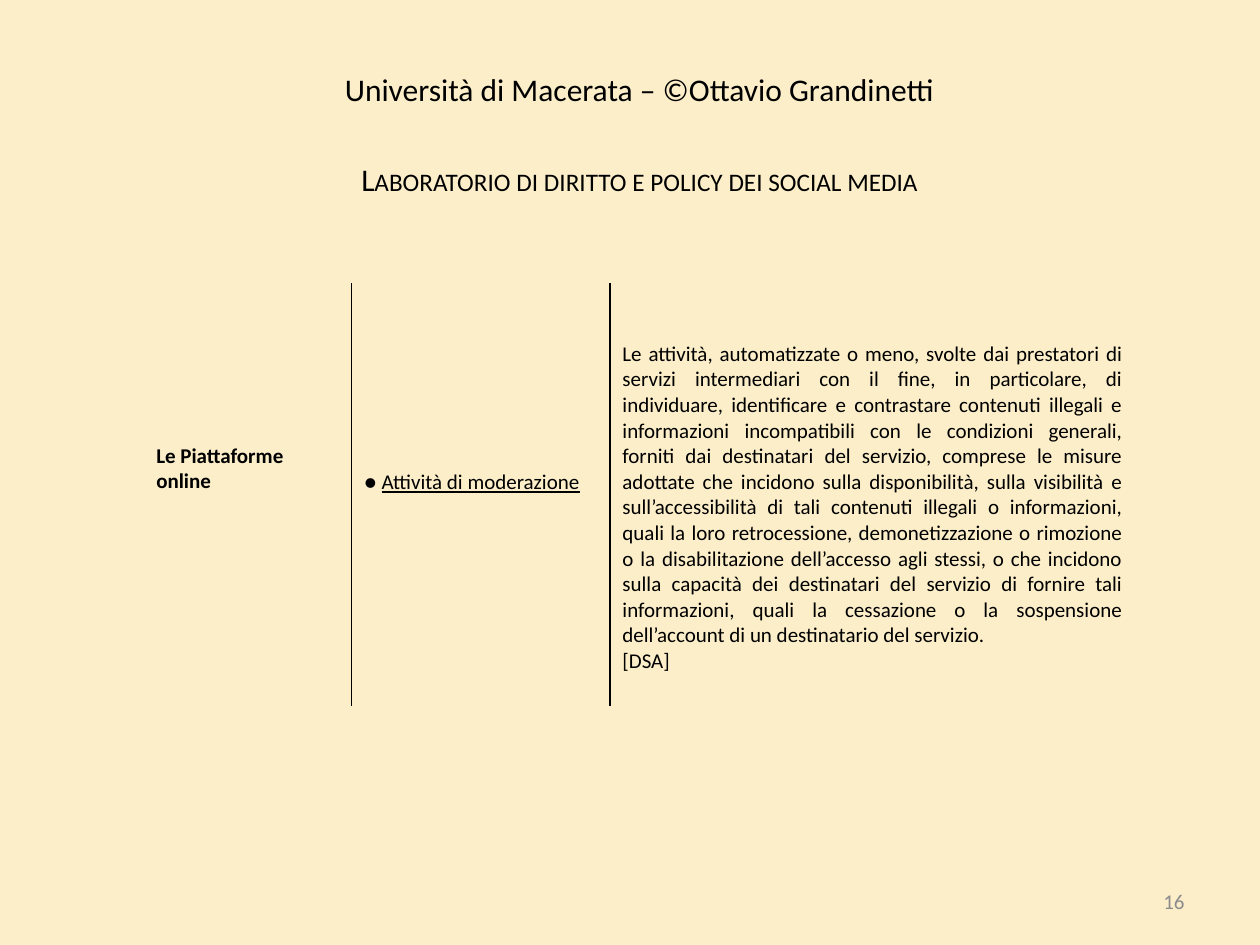
from dataclasses import dataclass, field

from lxml.etree import SubElement
from pptx import Presentation
from pptx.dml.color import RGBColor
from pptx.enum.text import MSO_ANCHOR as Anchor, PP_ALIGN as Align
from pptx.oxml import parse_xml
from pptx.oxml.ns import nsdecls, qn
from pptx.table import Table, _Cell as Cell
from pptx.text.text import TextFrame
from pptx.util import Inches, Length, Pt


@dataclass(frozen=True)
class Theme:
    font: str = "Calibri"
    background: str = "FBEEC9"
    ink: str = "000000"
    muted: str = "8C8C8C"
    heading_size: int = 18
    body_size: int = 12
    rule_width: int = 1


@dataclass(frozen=True)
class Span:
    text: str
    format: dict = field(default_factory=dict)
    small_caps: bool = False


@dataclass(frozen=True)
class Entry:
    """Text of one table cell; drop is the top margin as a share of the height."""
    row: int
    column: int
    paragraphs: list
    size: int
    align: Align = Align.LEFT
    drop: float = 0.67
    rows: int = 1
    columns: int = 1


THEME = Theme()
WIDTH, HEIGHT = Inches(10), Inches(7.5)
NO_STYLE = "{2D5ABB26-0587-4C30-8999-92F81FD0307C}"

# Table grid, in percent of the slide's size
TABLE_LEFT, TABLE_TOP = 11.4, 6.93
COLUMN_SHARES = (16.5, 20.5, 41.7)
ROW_SHARES = (5.47, 17.6, 5.47, 39.2)

DEFINITION = (
    "Le attività, automatizzate o meno, svolte dai prestatori di servizi intermediari "
    "con il fine, in particolare, di individuare, identificare e contrastare contenuti "
    "illegali e informazioni incompatibili con le condizioni generali, forniti dai "
    "destinatari del servizio, comprese le misure adottate che incidono sulla "
    "disponibilità, sulla visibilità e sull’accessibilità di tali contenuti illegali o "
    "informazioni, quali la loro retrocessione, demonetizzazione o rimozione o la "
    "disabilitazione dell’accesso agli stessi, o che incidono sulla capacità dei "
    "destinatari del servizio di fornire tali informazioni, quali la cessazione o la "
    "sospensione dell’account di un destinatario del servizio."
)

ENTRIES = [
    Entry(0, 0, [[Span("Università di Macerata – ©Ottavio Grandinetti")]],
          THEME.heading_size, Align.CENTER, columns=3),
    Entry(1, 0, [[Span("Laboratorio di diritto e policy dei social media", small_caps=True)]],
          THEME.heading_size, Align.CENTER, drop=4.7, columns=3),
    Entry(2, 0, [[Span("Le Piattaforme online", {"bold": True})]],
          THEME.body_size, drop=16.93, rows=2),
    Entry(3, 1, [[Span("● "), Span("Attività di moderazione", {"underline": True})]],
          THEME.body_size, drop=14.2),
    Entry(3, 2, [[Span(DEFINITION)], [Span("[DSA]")]], THEME.body_size, Align.JUSTIFY),
]


def across(share: float) -> Length:
    return Length(round(WIDTH * share / 100))


def down(share: float) -> Length:
    return Length(round(HEIGHT * share / 100))


def write(frame: TextFrame, paragraphs: list, size: int, align: Align, color: str) -> None:
    for index, spans in enumerate(paragraphs):
        paragraph = frame.paragraphs[0] if index == 0 else frame.add_paragraph()
        paragraph.alignment = align
        for span in spans:
            run = paragraph.add_run()
            run.text = span.text
            for name, value in {"name": THEME.font, "size": Pt(size), **span.format}.items():
                setattr(run.font, name, value)
            run.font.color.rgb = RGBColor.from_string(color)
            if span.small_caps:
                run._r.get_or_add_rPr().set("cap", "small")


def draw_edge(cell: Cell, side: str) -> None:
    """Rule one side (L or R) of a cell; edges precede the fill in the XML."""
    edge = parse_xml(f'<a:ln{side} {nsdecls("a")} w="{Pt(THEME.rule_width)}"/>')
    fill = SubElement(edge, qn("a:solidFill"))
    SubElement(fill, qn("a:srgbClr")).set("val", THEME.ink)
    cell._tc.get_or_add_tcPr().insert(0, edge)


def fill_entry(table: Table, entry: Entry) -> None:
    cell = table.cell(entry.row, entry.column)
    if entry.rows * entry.columns > 1:
        cell.merge(table.cell(entry.row + entry.rows - 1, entry.column + entry.columns - 1))
    cell.margin_top = down(entry.drop)
    write(cell.text_frame, entry.paragraphs, entry.size, entry.align, THEME.ink)


def add_content_table(slide) -> None:
    frame = slide.shapes.add_table(
        len(ROW_SHARES), len(COLUMN_SHARES), across(TABLE_LEFT), down(TABLE_TOP),
        across(sum(COLUMN_SHARES)), down(sum(ROW_SHARES)))
    table = frame.table
    table.first_row = table.horz_banding = False
    frame._element.find(".//" + qn("a:tableStyleId")).text = NO_STYLE
    for column, share in zip(table.columns, COLUMN_SHARES):
        column.width = across(share)
    for row, share in zip(table.rows, ROW_SHARES):
        row.height = down(share)
    for cell in table.iter_cells():
        cell.fill.background()
    for entry in ENTRIES:
        fill_entry(table, entry)
    # Vertical rule beside the topic column
    for row in (2, 3):
        draw_edge(table.cell(row, 0), "R")
        draw_edge(table.cell(row, 1), "L")


def add_page_number(slide) -> None:
    box = slide.shapes.add_textbox(across(71.7), down(92.67), across(23.3), down(5.33))
    box.text_frame.word_wrap = True
    box.text_frame.vertical_anchor = Anchor.MIDDLE
    write(box.text_frame, [[Span("16")]], THEME.body_size, Align.RIGHT, THEME.muted)


def main() -> None:
    presentation = Presentation()
    presentation.slide_width, presentation.slide_height = WIDTH, HEIGHT
    slide = presentation.slides.add_slide(presentation.slide_layouts[6])
    slide.background.fill.solid()
    slide.background.fill.fore_color.rgb = RGBColor.from_string(THEME.background)
    add_page_number(slide)
    add_content_table(slide)
    presentation.save("out.pptx")


if __name__ == "__main__":
    main()
